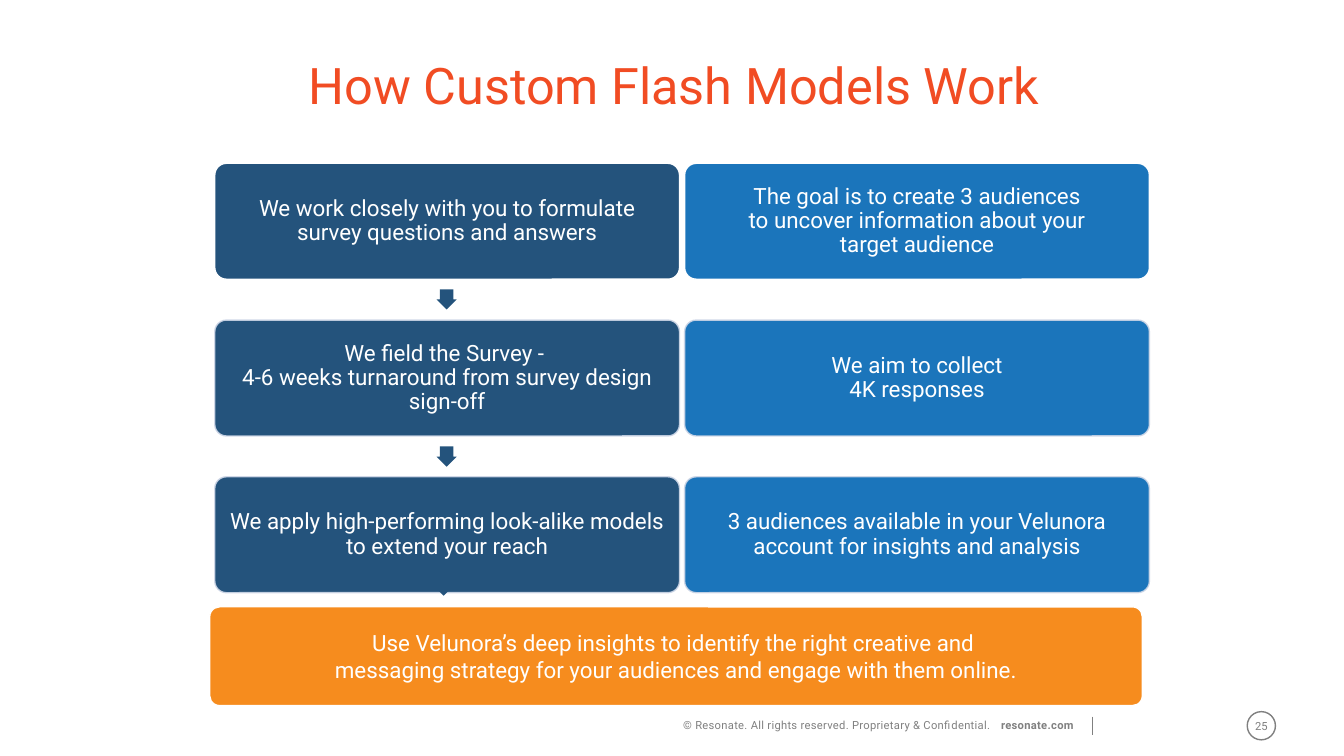
from lxml import etree
from pptx import Presentation
from pptx import util as u
from pptx.dml.color import RGBColor
from pptx.enum import shapes, text
from pptx.oxml.ns import qn

COLORS = {
    "title": "F14C23", "step": "24537C", "detail": "1B75BB", "result": "F68C1E",
    "white": "FFFFFF", "edge": "CDD6E7", "gray": "808080",
}
FONT = "Roboto"
TITLE = "How Custom Flash Models Work"
ROWS = [
    ("We work closely with you to formulate survey questions and answers",
     "The goal is to create 3 audiences\vto uncover information about your\vtarget audience"),
    ("We field the Survey - \v4-6 weeks turnaround from survey design sign-off",
     "We aim to collect\v4K responses"),
    ("We apply high-performing look-alike models to extend your reach",
     "3 audiences available in your Velunora account for insights and analysis"),
]
RESULT = ("Use Velunora’s deep insights to identify the right creative and \v"
          "messaging strategy for your audiences and engage with them online.")
FOOTER = [("© Resonate. All rights reserved. Proprietary & Confidential.", False, 20),
          (" ", False, 500), ("resonate.com", True, 20)]
PAGE_NUMBER = "25"

COLUMNS = [(2.13, "step"), (6.79, "detail")]
CARD_W, CARD_H = 4.61, 1.15
FIRST_ROW, ROW_STEP = 1.62, 1.555
ARROW = 0.2
ARROWS = [(4.33, 2.87), (4.33, 4.43), (4.3, 5.71)]


def color(name):
    return RGBColor.from_string(COLORS[name])


def apply(target, values):
    for name, value in values.items():
        setattr(target, name, value)


def add_shape(page, kind, place, fill=None, line=None, adjust=()):
    shape = page.shapes.add_shape(kind, *map(u.Inches, place))
    shape.shadow.inherit = False
    for index, value in enumerate(adjust):
        shape.adjustments[index] = value
    if fill:
        shape.fill.solid()
        shape.fill.fore_color.rgb = color(fill)
    else:
        shape.fill.background()
    if line:
        shape.line.color.rgb = color(line)
        shape.line.width = u.Pt(1)
    else:
        shape.line.fill.background()
    return shape


def style_span(span, size, ink, bold=False):
    apply(span.font, {"name": FONT, "size": u.Pt(size), "bold": bold})
    span.font.color.rgb = color(ink)


def write(box, words, size, ink, inset=(0.1, 0.1), spacing=1.0, wrap=True):
    frame = box.text_frame
    across, down = map(u.Inches, inset)
    apply(frame, {
        "word_wrap": wrap, "vertical_anchor": text.MSO_ANCHOR.MIDDLE,
        "margin_left": across, "margin_right": across,
        "margin_top": down, "margin_bottom": down,
    })
    para = frame.paragraphs[0]
    para.text = words
    apply(para, {"alignment": text.PP_ALIGN.CENTER, "line_spacing": spacing})
    for span in para.runs:
        style_span(span, size, ink)


def add_footer(page):
    badge = add_shape(page, shapes.MSO_SHAPE.OVAL, (12.37, 7.06, 0.28, 0.28), line="gray")
    write(badge, PAGE_NUMBER, 8, "gray", inset=(0, 0), wrap=False)

    box = page.shapes.add_textbox(*map(u.Inches, (0, 7.08, 10.78, 0.24)))
    apply(box.text_frame, {"word_wrap": True, "margin_right": u.Inches(0.13)})
    para = box.text_frame.paragraphs[0]
    para.alignment = text.PP_ALIGN.RIGHT
    for words, bold, tracking in FOOTER:
        span = para.add_run()
        span.text = words
        style_span(span, 8, "gray", bold)
        span.font._element.set("spc", str(tracking))

    rule = page.shapes.add_connector(
        shapes.MSO_CONNECTOR.STRAIGHT, *map(u.Inches, (10.83, 7.11, 10.83, 7.29)))
    rule.line.color.rgb = color("gray")
    rule.line.width = u.Pt(0.5)
    etree.SubElement(rule._element.spPr, qn("a:effectLst"))


def add_cards(page):
    for left, fill in COLUMNS:
        for row, pair in enumerate(ROWS):
            place = (left, FIRST_ROW + row * ROW_STEP, CARD_W, CARD_H)
            card = add_shape(page, shapes.MSO_SHAPE.ROUNDED_RECTANGLE, place, fill,
                             "edge" if row else "white", (0.1,))
            if row:
                edge = card.line._ln.find(".//" + qn("a:srgbClr"))
                etree.SubElement(edge, qn("a:alpha"), val="90000")
            write(card, pair[0 if fill == "step" else 1], 16, "white", spacing=0.9)


def main():
    deck = Presentation()
    apply(deck, {"slide_width": u.Inches(13.33), "slide_height": u.Inches(7.5)})
    page = deck.slides.add_slide(deck.slide_layouts[6])
    add_footer(page)
    heading = page.shapes.add_textbox(*map(u.Inches, (0.74, 0.53, 11.89, 0.69)))
    write(heading, TITLE, 36, "title", inset=(0.4, 0.05), spacing=0.9)
    add_cards(page)
    for left, top in ARROWS:
        arrow = add_shape(page, shapes.MSO_SHAPE.RIGHT_ARROW, (left, top, ARROW, ARROW),
                          "step", adjust=(0.667, 0.5))
        arrow.rotation = 90
    result = add_shape(page, shapes.MSO_SHAPE.ROUNDED_RECTANGLE, (2.08, 6.02, 9.25, 0.98),
                       "result", "white", (0.1,))
    write(result, RESULT, 16, "white")
    deck.save("out.pptx")


if __name__ == "__main__":
    main()
